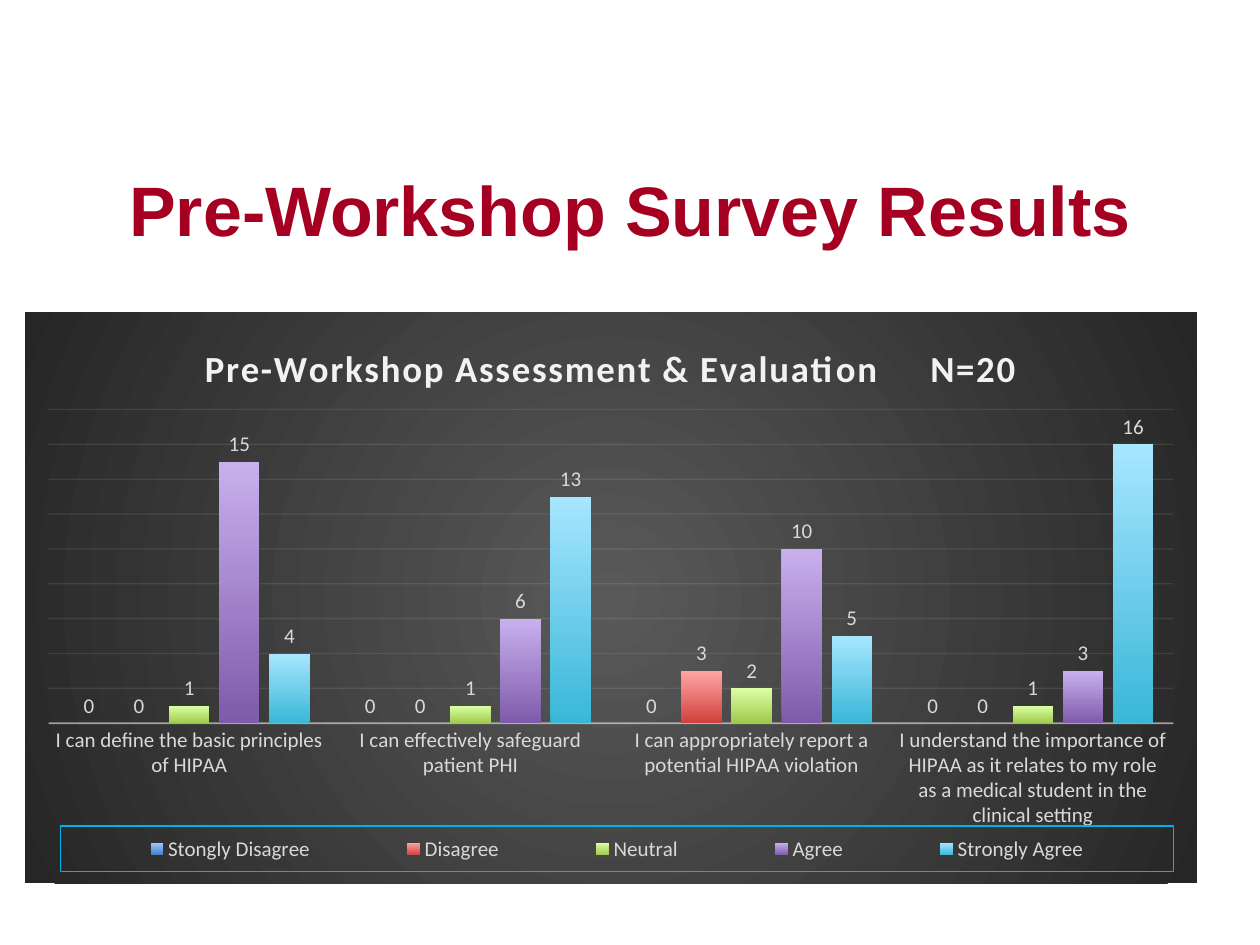
from dataclasses import dataclass

from pptx import Presentation
from pptx.chart.chart import Chart
from pptx.chart.data import CategoryChartData
from pptx.dml.color import RGBColor
from pptx.dml.line import LineFormat
from pptx.enum.chart import XL_CHART_TYPE as ChartType
from pptx.enum.chart import XL_LABEL_POSITION as LabelPosition
from pptx.enum.chart import XL_LEGEND_POSITION as LegendPosition
from pptx.enum.chart import XL_TICK_MARK as TickMark
from pptx.enum.text import MSO_ANCHOR as Anchor
from pptx.enum.text import PP_ALIGN as Align
from pptx.oxml import parse_xml
from pptx.oxml.ns import nsdecls, qn
from pptx.util import Inches, Pt

CRIMSON = RGBColor(0xA5, 0x00, 0x21)
BLACK = RGBColor(0x00, 0x00, 0x00)
PALE = RGBColor(0xF2, 0xF2, 0xF2)
LABEL_GREY = RGBColor(0xD9, 0xD9, 0xD9)
CENTRE_GREY = RGBColor(0x59, 0x59, 0x59)
EDGE_GREY = RGBColor(0x26, 0x26, 0x26)
LEGEND_BLUE = RGBColor(0x00, 0xB0, 0xF0)

SLIDE_W, SLIDE_H = Inches(10), Inches(7.5)


@dataclass(frozen=True)
class Answer:
    name: str
    counts: tuple[int, ...]
    bottom: RGBColor
    top: RGBColor


@dataclass(frozen=True)
class Area:
    """Place inside the chart, as shares of its width and height."""
    x: float
    y: float
    w: float | None = None
    h: float | None = None


STATEMENTS = (
    "I can define the basic principles of HIPAA",
    "I can effectively safeguard patient PHI",
    "I can appropriately report a potential HIPAA violation",
    "I understand the importance of HIPAA as it relates to my role "
    "as a medical student in the clinical setting",
)
ANSWERS = (
    Answer("Stongly Disagree", (0, 0, 0, 0),
           RGBColor(0x3F, 0x80, 0xCE), RGBColor(0xA4, 0xC4, 0xFF)),
    Answer("Disagree", (0, 0, 3, 0),
           RGBColor(0xD1, 0x40, 0x3C), RGBColor(0xFF, 0xA6, 0xA5)),
    Answer("Neutral", (1, 1, 2, 1),
           RGBColor(0xA0, 0xCA, 0x4A), RGBColor(0xDA, 0xFF, 0xA5)),
    Answer("Agree", (15, 6, 10, 3),
           RGBColor(0x7F, 0x5B, 0xAB), RGBColor(0xC8, 0xB0, 0xED)),
    Answer("Strongly Agree", (4, 13, 5, 16),
           RGBColor(0x39, 0xB7, 0xD8), RGBColor(0xA7, 0xE6, 0xFF)),
)


def set_font(font, size: float, color: RGBColor, name: str = "Calibri",
             bold: bool = False) -> None:
    font.size, font.name, font.bold = Pt(size), name, bold
    font.color.rgb = color


def set_line(line: LineFormat, width: float, opacity: int) -> None:
    line.width = Pt(width)
    line.color.rgb = PALE
    color = line._ln.find(".//" + qn("a:srgbClr"))
    color.append(parse_xml(f'<a:alpha {nsdecls("a")} val="{opacity * 1000}"/>'))


def place(chart: Chart, tag: str, index: int, area: Area) -> None:
    """Give a chart part a fixed place."""
    part = chart.element.find(".//" + qn(tag))
    for layout in part.findall(qn("c:layout")):
        part.remove(layout)
    target = '<c:layoutTarget val="inner"/>' if tag == "c:plotArea" else ""
    shares = {"x": area.x, "y": area.y, "w": area.w, "h": area.h}
    modes = '<c:xMode val="edge"/><c:yMode val="edge"/>'
    values = "".join(f'<c:{key} val="{share}"/>'
                     for key, share in shares.items() if share is not None)
    part.insert(index, parse_xml(
        f'<c:layout {nsdecls("c")}><c:manualLayout>{target}{modes}{values}'
        '</c:manualLayout></c:layout>'))


def add_heading(slide) -> None:
    heading = slide.shapes.title
    heading.left, heading.top = int(SLIDE_W * 0.05), Inches(1.03)
    heading.width, heading.height = int(SLIDE_W * 0.9), Inches(1.25)
    heading.text_frame.text = "Pre-Workshop Survey Results"
    heading.text_frame.vertical_anchor = Anchor.MIDDLE
    paragraph = heading.text_frame.paragraphs[0]
    paragraph.alignment = Align.CENTER
    set_font(paragraph.font, 40, CRIMSON, "Arial", bold=True)


def add_survey_chart(slide) -> Chart:
    data = CategoryChartData(number_format="General")
    data.categories = STATEMENTS
    for answer in ANSWERS:
        data.add_series(answer.name, answer.counts)
    chart = slide.shapes.add_chart(
        ChartType.COLUMN_CLUSTERED, Inches(0.2), Inches(2.48),
        Inches(9.3), Inches(4.53), data).chart
    set_font(chart.font, 10, BLACK)
    return chart


def style_background(chart: Chart) -> None:
    chart.element.find(qn("c:chart")).addnext(parse_xml(
        f'<c:spPr {nsdecls("c", "a")}><a:gradFill><a:gsLst>'
        f'<a:gs pos="0"><a:srgbClr val="{CENTRE_GREY}"/></a:gs>'
        f'<a:gs pos="100000"><a:srgbClr val="{EDGE_GREY}"/></a:gs></a:gsLst>'
        '<a:path path="circle"><a:fillToRect l="50000" t="50000" r="50000" '
        'b="50000"/></a:path></a:gradFill><a:ln><a:noFill/></a:ln></c:spPr>'))


def style_title(chart: Chart) -> None:
    paragraph = chart.chart_title.text_frame.paragraphs[0]
    set_font(paragraph.font, 21, PALE, bold=True)
    # The wide gap before the sample size is letter spacing on one space
    for text, spacing in (("Pre-Workshop Assessment & Evaluation", 100),
                          (" ", 2400), ("N=20", 100)):
        run = paragraph.add_run()
        run.text = text
        set_font(run.font, 21, PALE, bold=True)
        run.font._element.set("spc", str(spacing))
    place(chart, "c:title", 1, Area(0.15, 0.05))


def style_columns(chart: Chart) -> None:
    plot = chart.plots[0]
    plot.gap_width, plot.overlap, plot.vary_by_categories = 100, -24, False
    for series, answer in zip(plot.series, ANSWERS):
        fill = series.format.fill
        fill.gradient()
        fill.gradient_angle = 90
        for stop, color in zip(fill.gradient_stops, (answer.bottom, answer.top)):
            stop.color.rgb = color
        labels = series.data_labels
        labels.show_value = True
        labels.position = LabelPosition.OUTSIDE_END
        set_font(labels.font, 12, LABEL_GREY)
    place(chart, "c:plotArea", 0, Area(0.02, 0.17, 0.96, 0.55))


def style_axes(chart: Chart) -> None:
    statements, counts = chart.category_axis, chart.value_axis
    statements.major_tick_mark = statements.minor_tick_mark = TickMark.NONE
    set_font(statements.tick_labels.font, 12, LABEL_GREY)
    set_line(statements.format.line, 1, 54)
    counts.minimum_scale, counts.maximum_scale, counts.major_unit = 0, 18, 2
    set_line(counts.major_gridlines.format.line, 0.75, 10)
    counts.visible = False


def style_legend(chart: Chart) -> None:
    chart.has_legend = True
    legend = chart.legend
    legend.position = LegendPosition.BOTTOM
    legend.include_in_layout = False
    set_font(legend.font, 12, LABEL_GREY)
    place(chart, "c:legend", 1, Area(0.03, 0.9, 0.95, 0.08))
    chart.element.find(".//" + qn("c:legend")).find(qn("c:overlay")).addnext(parse_xml(
        f'<c:spPr {nsdecls("c", "a")}><a:noFill/><a:ln w="{Pt(0.75)}"><a:solidFill>'
        f'<a:srgbClr val="{LEGEND_BLUE}"/></a:solidFill></a:ln></c:spPr>'))


def main() -> None:
    deck = Presentation()
    deck.slide_width, deck.slide_height = SLIDE_W, SLIDE_H
    slide = deck.slides.add_slide(deck.slide_layouts[5])
    add_heading(slide)

    # Survey chart and its parts
    chart = add_survey_chart(slide)
    for style in (style_background, style_title, style_columns,
                  style_axes, style_legend):
        style(chart)
    deck.save("out.pptx")


if __name__ == "__main__":
    main()
